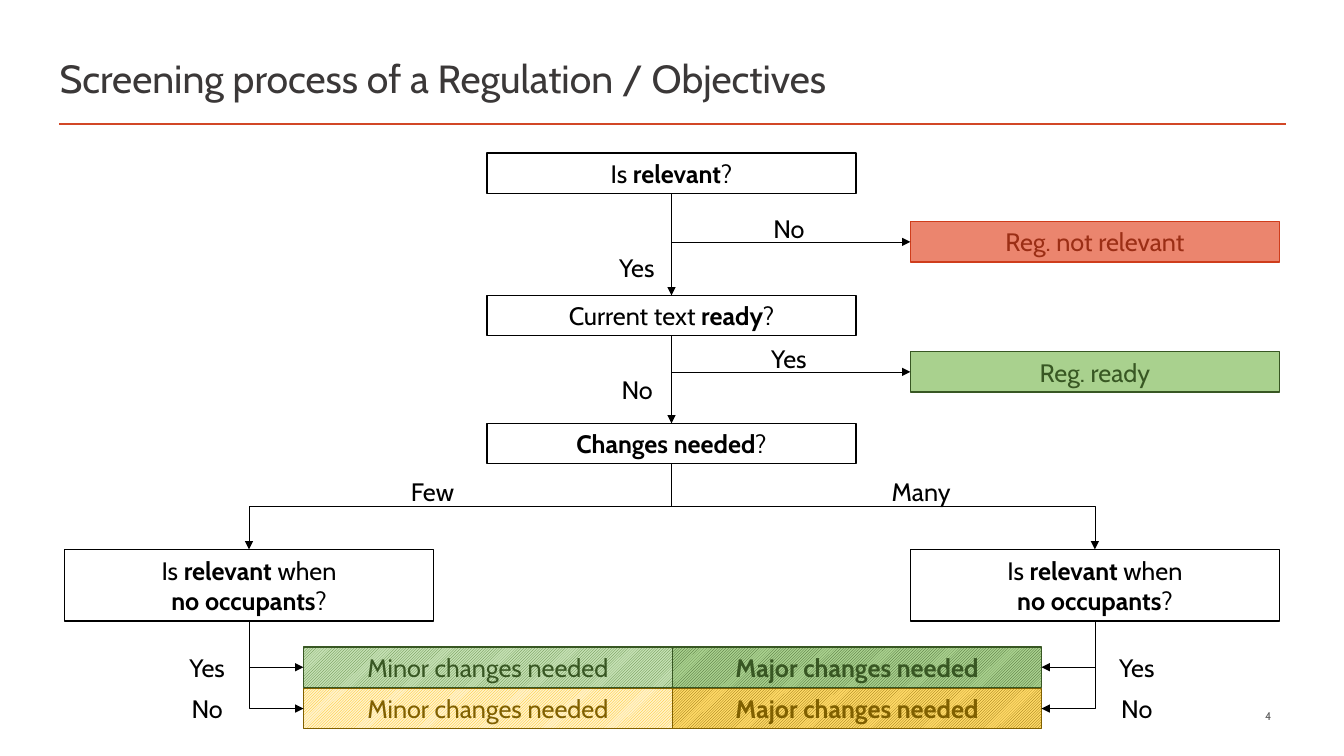
from pptx import Presentation
from pptx.dml.color import RGBColor
from pptx.enum.dml import MSO_PATTERN
from pptx.enum.shapes import MSO_CONNECTOR, MSO_SHAPE
from pptx.enum.text import MSO_ANCHOR, MSO_AUTO_SIZE, PP_ALIGN
from pptx.oxml.ns import qn
from pptx.util import Inches, Pt
from lxml import etree

STRAIGHT, ELBOW = MSO_CONNECTOR.STRAIGHT, MSO_CONNECTOR.ELBOW
RECTANGLE = MSO_SHAPE.RECTANGLE
DIAGONAL = MSO_PATTERN.DARK_UPWARD_DIAGONAL
LEFT, CENTER, RIGHT = PP_ALIGN.LEFT, PP_ALIGN.CENTER, PP_ALIGN.RIGHT
MIDDLE, TOP = MSO_ANCHOR.MIDDLE, MSO_ANCHOR.TOP
GROW, FIXED = MSO_AUTO_SIZE.SHAPE_TO_FIT_TEXT, MSO_AUTO_SIZE.NONE

FONT = "Cabin"
BLACK = RGBColor(0x00, 0x00, 0x00)
TITLE_GREY = RGBColor(0x3B, 0x38, 0x38)
NUMBER_GREY = RGBColor(0x59, 0x59, 0x59)
RULE_ORANGE = RGBColor(0xD2, 0x47, 0x26)
RED_FILL = RGBColor(0xEB, 0x85, 0x6E)
RED_LINE = RGBColor(0xCF, 0x3D, 0x1C)
RED_TEXT = RGBColor(0x9B, 0x2E, 0x15)
GREEN = RGBColor(0xA9, 0xD1, 0x8E)
PALE_GREEN = RGBColor(0xC5, 0xE0, 0xB4)
MID_GREEN = RGBColor(0x54, 0x82, 0x35)
DARK_GREEN = RGBColor(0x38, 0x57, 0x23)
YELLOW = RGBColor(0xFF, 0xD9, 0x66)
PALE_YELLOW = RGBColor(0xFF, 0xF2, 0xCC)
AMBER = RGBColor(0xFF, 0xC0, 0x00)
BROWN = RGBColor(0x80, 0x60, 0x00)

TITLE = "Screening process of a Regulation / Objectives"
SLIDE_NUMBER = "4"

# Column edges and centres, row tops, box sizes
BOX_W, BOX_H, TALL_H = 3.66, 0.4, 0.71
LEFT_COL, MID_COL, RIGHT_COL = 0.64, 4.83, 9.03
LEFT_X, MID_X, RIGHT_X = (col + BOX_W / 2 for col in (LEFT_COL, MID_COL, RIGHT_COL))
MINOR_COL, MAJOR_COL = 3.01, 6.67
MAJOR_END = MAJOR_COL + BOX_W
RELEVANT_Y, READY_Y, CHANGES_Y, OCCUPANTS_Y = 1.52, 2.93, 4.2, 5.45
YES_Y, NO_Y = 6.42, 6.83
REJECT_Y, ACCEPT_Y = 2.2, 3.49
OCCUPANTS_END = OCCUPANTS_Y + TALL_H

# Asterisks enclose bold words
OCCUPANTS = "Is *relevant* when\n*no occupants*?"

# text, left, top, height
QUESTIONS = [
    ("Is *relevant*?", MID_COL, RELEVANT_Y, BOX_H),
    ("Current text *ready*?", MID_COL, READY_Y, BOX_H),
    ("*Changes needed*?", MID_COL, CHANGES_Y, BOX_H),
    (OCCUPANTS, LEFT_COL, OCCUPANTS_Y, TALL_H),
    (OCCUPANTS, RIGHT_COL, OCCUPANTS_Y, TALL_H),
]

# text, left, top, fill, hatch, line colour, text colour
OUTCOMES = [
    ("Reg. not relevant", RIGHT_COL, REJECT_Y, RED_FILL, None, RED_LINE, RED_TEXT),
    ("Reg. ready", RIGHT_COL, ACCEPT_Y, GREEN, None, DARK_GREEN, DARK_GREEN),
    ("*Major changes needed*", MAJOR_COL, YES_Y, GREEN, DARK_GREEN, DARK_GREEN, DARK_GREEN),
    ("*Major changes needed*", MAJOR_COL, NO_Y, YELLOW, BROWN, BROWN, BROWN),
    ("Minor changes needed", MINOR_COL, YES_Y, PALE_GREEN, MID_GREEN, DARK_GREEN, DARK_GREEN),
    ("Minor changes needed", MINOR_COL, NO_Y, PALE_YELLOW, AMBER, BROWN, BROWN),
]

# text, left, top, width
ANSWERS = [
    ("Yes", 6.02, 2.45, 0.59), ("No", 7.41, 2.07, 0.83),
    ("No", 6.05, 3.66, 0.54), ("Yes", 7.41, 3.36, 0.83),
    ("Few", 3.85, 4.68, 0.88), ("Many", 8.64, 4.68, 0.99),
    ("Yes", 1.64, YES_Y, 0.83), ("No", 1.64, NO_Y, 0.83),
    ("Yes", RIGHT_X, YES_Y, 0.83), ("No", RIGHT_X, NO_Y, 0.83),
]

# start x, start y, end x, end y
DOWN_ARROWS = [
    (MID_X, RELEVANT_Y + BOX_H, MID_X, READY_Y),
    (MID_X, READY_Y + BOX_H, MID_X, CHANGES_Y),
]
SIDE_ARROWS = [
    (MID_X, RELEVANT_Y + BOX_H, RIGHT_COL, REJECT_Y + BOX_H / 2),
    (MID_X, READY_Y + BOX_H, RIGHT_COL, ACCEPT_Y + BOX_H / 2),
] + [
    (start, OCCUPANTS_END, end, top + BOX_H / 2)
    for start, end in ((LEFT_X, MINOR_COL), (RIGHT_X, MAJOR_END))
    for top in (YES_Y, NO_Y)
]
FORK_ARROWS = [(MID_X, CHANGES_Y + BOX_H, x, OCCUPANTS_Y) for x in (LEFT_X, RIGHT_X)]


def write(shape, text, size=18, color=BLACK, align=CENTER, anchor=TOP, autosize=GROW):
    """Fill a shape with text; words between asterisks become bold."""
    frame = shape.text_frame
    frame.word_wrap = True
    frame.auto_size = autosize
    frame.vertical_anchor = anchor
    frame.text = text
    for paragraph in frame.paragraphs:
        pieces = paragraph.text.split("*")
        paragraph.clear()
        paragraph.alignment = align
        for index, piece in enumerate(pieces):
            if piece:
                run = paragraph.add_run()
                run.text = piece
                run.font.name = FONT
                run.font.size = Pt(size)
                run.font.bold = index % 2 == 1
                run.font.color.rgb = color


def add_box(slide, text, left, top, height, line=BLACK, color=BLACK, fill=None, hatch=None):
    box = slide.shapes.add_shape(
        RECTANGLE, Inches(left), Inches(top), Inches(BOX_W), Inches(height))
    box.shadow.inherit = False
    if hatch is not None:
        box.fill.patterned()
        box.fill.pattern = DIAGONAL
        box.fill.fore_color.rgb = hatch
        box.fill.back_color.rgb = fill
    elif fill is not None:
        box.fill.solid()
        box.fill.fore_color.rgb = fill
    else:
        box.fill.background()
    box.line.color.rgb = line
    box.line.width = Pt(1)
    write(box, text, color=color, anchor=MIDDLE)


def add_label(slide, text, left, top, width, height=BOX_H, **style):
    label = slide.shapes.add_textbox(Inches(left), Inches(top), Inches(width), Inches(height))
    write(label, text, **style)


def add_line(slide, x1, y1, x2, y2, kind=STRAIGHT, color=BLACK, width=0.5, arrow=True):
    line = slide.shapes.add_connector(kind, Inches(x1), Inches(y1), Inches(x2), Inches(y2))
    line.line.color.rgb = color
    line.line.width = Pt(width)
    properties = line._element.spPr
    if arrow:
        etree.SubElement(properties.find(qn("a:ln")), qn("a:tailEnd"), type="triangle")
    etree.SubElement(properties, qn("a:effectLst"))
    return properties


def add_elbow(slide, x1, y1, x2, y2, preset):
    """Add a bent arrow that leaves downwards, as a quarter turn of the preset."""
    center_x, center_y = (x1 + x2) / 2, (y1 + y2) / 2
    half_w, half_h = (y2 - y1) / 2, abs(x2 - x1) / 2
    side = -1 if x2 > x1 else 1
    properties = add_line(
        slide, center_x - side * half_w, center_y - half_h,
        center_x + side * half_w, center_y + half_h, ELBOW)
    degrees = 270 if x2 > x1 else 90
    properties.find(qn("a:xfrm")).set("rot", str(degrees * 60000))
    properties.find(qn("a:prstGeom")).set("prst", preset)


def main():
    deck = Presentation()
    deck.slide_width, deck.slide_height = Inches(13.33), Inches(7.5)
    slide = deck.slides.add_slide(deck.slide_layouts[5])

    title = slide.shapes.title
    title.left, title.top = Inches(0.49), Inches(0.47)
    title.width, title.height = Inches(12.26), Inches(0.61)
    write(title, TITLE, size=28, color=TITLE_GREY, align=LEFT, anchor=MIDDLE, autosize=FIXED)
    add_line(slide, 0.59, 1.23, 12.75, 1.23, color=RULE_ORANGE, width=2, arrow=False)

    for text, left, top, height in QUESTIONS:
        add_box(slide, text, left, top, height)
    for text, left, top, fill, hatch, line, color in OUTCOMES:
        add_box(slide, text, left, top, BOX_H, line, color, fill, hatch)
    for ends in DOWN_ARROWS:
        add_line(slide, *ends)
    for ends in SIDE_ARROWS:
        add_elbow(slide, *ends, "bentConnector2")
    for ends in FORK_ARROWS:
        add_elbow(slide, *ends, "bentConnector3")
    for answer in ANSWERS:
        add_label(slide, *answer)
    add_label(slide, SLIDE_NUMBER, 9.13, 7.03, 3.58, 0.15, size=8, color=NUMBER_GREY,
              align=RIGHT, anchor=MIDDLE, autosize=FIXED)

    deck.save("out.pptx")


if __name__ == "__main__":
    main()
